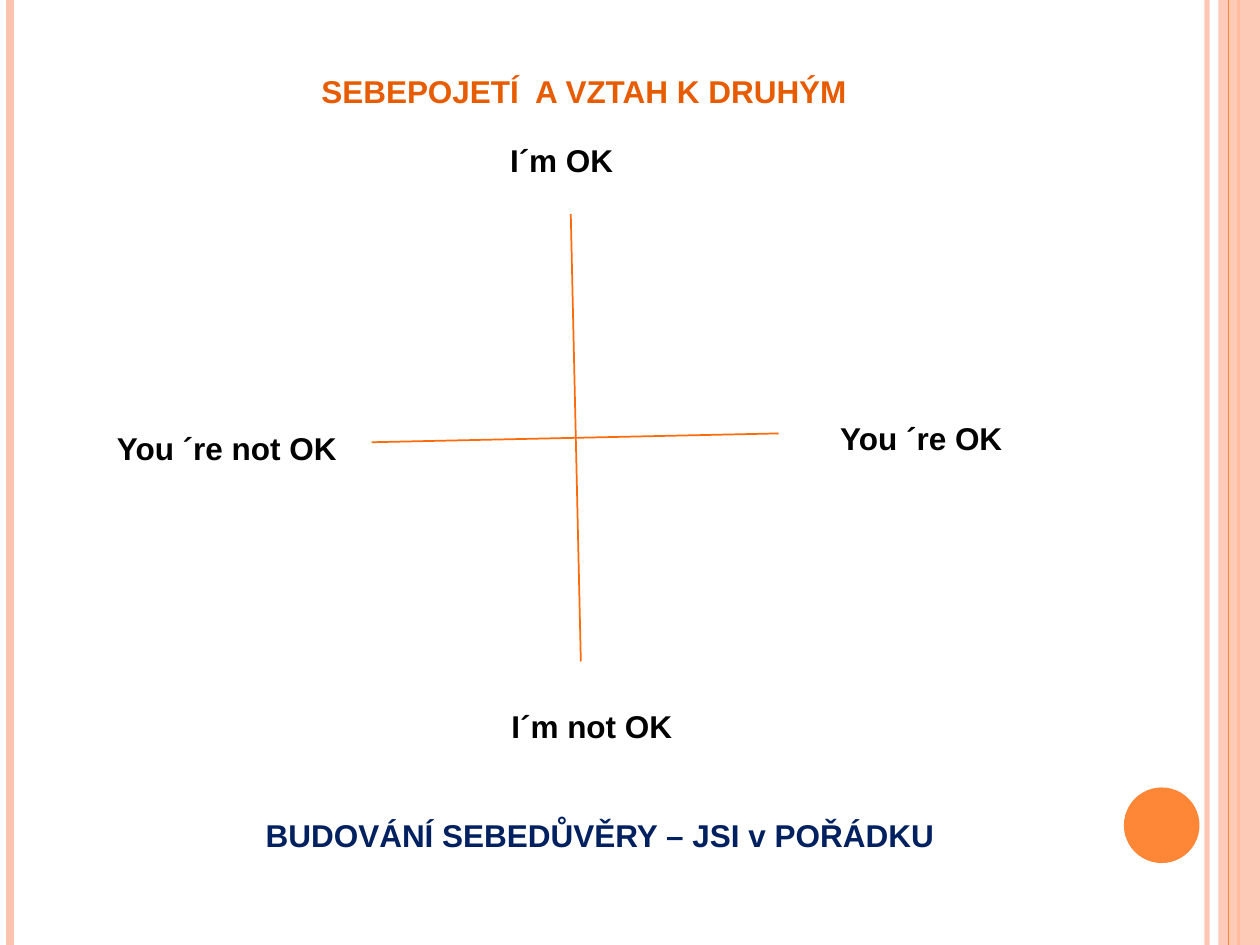
from lxml.etree import SubElement
from pptx import Presentation
from pptx.dml.color import RGBColor
from pptx.enum.shapes import MSO_CONNECTOR, MSO_SHAPE
from pptx.enum.text import MSO_ANCHOR, PP_ALIGN
from pptx.oxml.ns import qn
from pptx.util import Inches, Pt

THEME = {
    "font": "Arial", "size": 18,
    "title": "E75C01", "label": "000000", "motto": "002060",
    "axis": "FF6B0A", "pale": "FEC3AE", "accent": "FE8637",
}
WIDE, HIGH = 10, 7.5
ROW = 0.4

TITLE = ("SEBEPOJETÍ  A VZTAH K DRUHÝM", 2.45, 0.52, 4.59, "title")
LABELS = [
    ("I´m OK", 3.95, 1.07, 1.13, "label"),
    ("I´m not OK", 3.96, 5.56, 1.75, "label"),
    ("You ´re OK", 6.57, 3.28, 1.65, "label"),
    ("You ´re not OK", 0.83, 3.36, 1.96, "label"),
    ("BUDOVÁNÍ SEBEDŮVĚRY – JSI v POŘÁDKU", 2.01, 6.43, 5.72, "motto"),
]
AXES = [(4.53, 1.7, 4.61, 5.25), (2.95, 3.51, 6.18, 3.44)]
BACK_STRIPES = [(9.58, "pale", 3, 93), (0.08, "pale", 4.5, 100), (9.83, "accent", 1.5, 100)]
FRONT_STRIPE = (9.75, "accent", 0.75, 100)
BAND = (MSO_SHAPE.RECTANGLE, 9.67, 0, 0.33, HIGH, "pale", 87)
DOT = (MSO_SHAPE.OVAL, 8.92, 6.25, 0.6, 0.6, "accent", 100)


def color(name):
    return RGBColor.from_string(THEME[name])


def fade(element, alpha):
    if alpha < 100:
        tint = next(element.iter(qn("a:srgbClr")))
        SubElement(tint, qn("a:alpha")).set("val", str(alpha * 1000))


def add_line(slide, ends, tone, width, alpha=100):
    line = slide.shapes.add_connector(MSO_CONNECTOR.STRAIGHT, *map(Inches, ends))
    line.line.color.rgb = color(tone)
    line.line.width = Pt(width)
    props = line._element.spPr
    fade(props, alpha)
    SubElement(props, qn("a:effectLst"))


def add_stripe(slide, x, tone, width, alpha):
    add_line(slide, (x, 0, x, HIGH), tone, width, alpha)


def add_solid(slide, kind, x, y, w, h, tone, alpha):
    shape = slide.shapes.add_shape(kind, *map(Inches, (x, y, w, h)))
    shape.shadow.inherit = False
    shape.fill.solid()
    shape.fill.fore_color.rgb = color(tone)
    shape.line.fill.background()
    fade(shape._element.spPr, alpha)


def set_text(shape, text, tone):
    frame = shape.text_frame
    frame.text = text
    frame.word_wrap = True
    frame.vertical_anchor = MSO_ANCHOR.TOP
    frame.paragraphs[0].alignment = PP_ALIGN.LEFT
    font = frame.paragraphs[0].runs[0].font
    font.name, font.size, font.bold = THEME["font"], Pt(THEME["size"]), True
    font.color.rgb = color(tone)


def main():
    deck = Presentation()
    deck.slide_width, deck.slide_height = Inches(WIDE), Inches(HIGH)
    slide = deck.slides.add_slide(deck.slide_layouts[5])

    for stripe in BACK_STRIPES:
        add_stripe(slide, *stripe)
    add_solid(slide, *BAND)
    add_stripe(slide, *FRONT_STRIPE)
    add_solid(slide, *DOT)
    for axis in AXES:
        add_line(slide, axis, "axis", 1)

    text, x, y, w, tone = TITLE
    title = slide.shapes.title
    title.left, title.top, title.width, title.height = map(Inches, (x, y, w, ROW))
    set_text(title, text, tone)
    for text, x, y, w, tone in LABELS:
        box = slide.shapes.add_textbox(*map(Inches, (x, y, w, ROW)))
        set_text(box, text, tone)

    deck.save("out.pptx")


if __name__ == "__main__":
    main()
